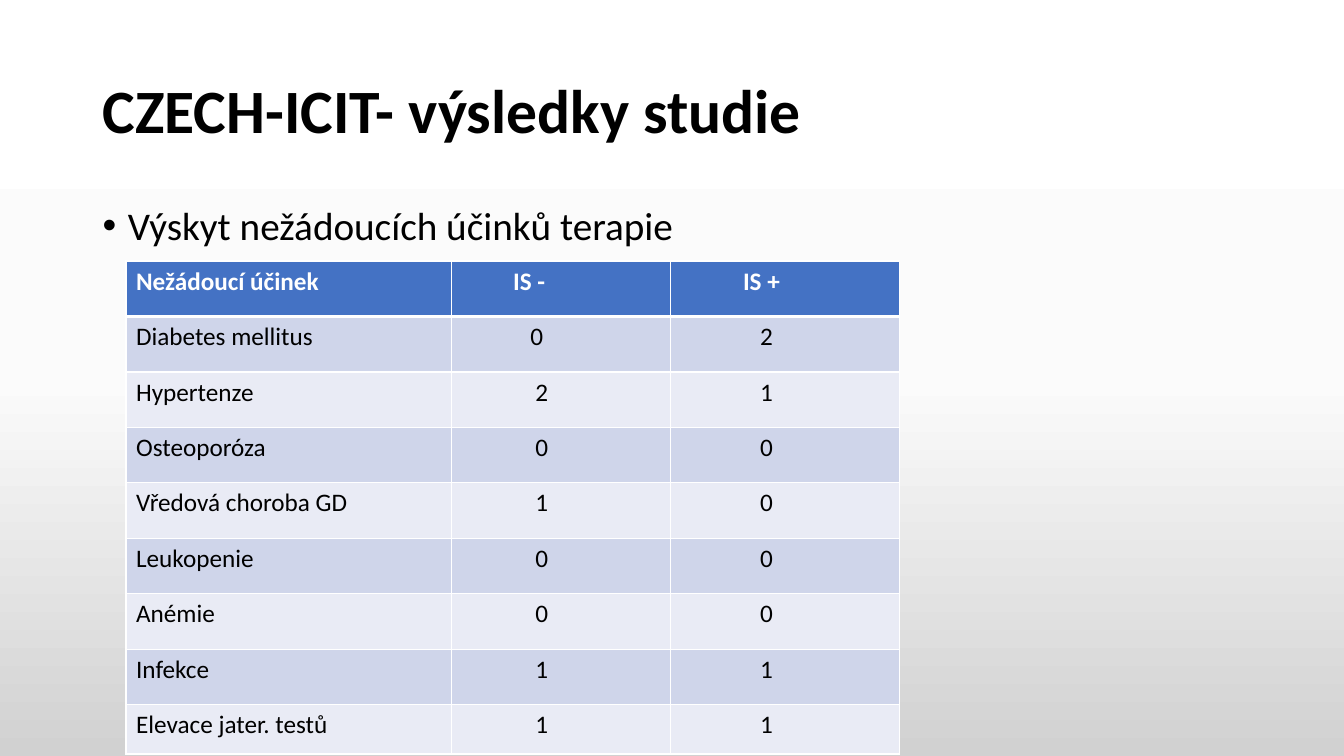
from copy import deepcopy

from lxml.etree import SubElement
from pptx import Presentation
from pptx.dml.color import RGBColor
from pptx.enum.text import MSO_ANCHOR
from pptx.oxml.ns import qn
from pptx.util import Inches, Pt

COLORS = {
    "text": "000000",
    "white": "FFFFFF",
    "header": "4472C4",
    "band_dark": "CFD5EA",
    "band_light": "E9EBF5",
    "background_middle": "FBFBFB",
    "background_bottom": "D1D1D1",
}

ADVERSE_EFFECTS = [
    ("Nežádoucí účinek", "IS -", "IS +"),
    ("Diabetes mellitus", "0", "2"),
    ("Hypertenze", "2", "1"),
    ("Osteoporóza", "0", "0"),
    ("Vředová choroba GD", "1", "0"),
    ("Leukopenie", "0", "0"),
    ("Anémie", "0", "0"),
    ("Infekce", "1", "1"),
    ("Elevace jater. testů", "1", "1"),
]
COLUMN_WIDTHS = (3.23, 2.17, 2.27)
ROW_HEIGHTS = [0.55] * 8 + [0.49]
HEADER_INDENTS = (0.1, 0.61, 0.72)
FIRST_ROW_INDENTS = (0.1, 0.78, 0.89)
VALUE_INDENTS = (0.1, 0.83, 0.89)


class SlideBuilder:
    font_name = "Calibri"

    def __init__(self, slide):
        self.slide = slide

    def color(self, name):
        return RGBColor.from_string(COLORS[name])

    def style(self, paragraph, size, color="text", bold=False):
        for run in paragraph.runs:
            run.font.name = self.font_name
            run.font.size = Pt(size)
            run.font.bold = bold
            run.font.color.rgb = self.color(color)

    def background(self, stops):
        fill = self.slide.background.fill
        fill.gradient()
        fill.gradient_angle = 270
        stop_list = self.slide.element.find(".//" + qn("a:gsLst"))
        while len(stop_list) < len(stops):
            stop_list.append(deepcopy(stop_list[0]))
        for stop, (position, name) in zip(fill.gradient_stops, stops):
            stop.position = position
            stop.color.rgb = self.color(name)

    def text(self, box, text, size, bold=False, anchor=MSO_ANCHOR.TOP, bullet=False):
        shape = self.slide.shapes.add_textbox(*map(Inches, box))
        frame = shape.text_frame
        frame.word_wrap = True
        frame.vertical_anchor = anchor
        frame.text = text
        paragraph = frame.paragraphs[0]
        paragraph.line_spacing = 0.9
        if bullet:
            properties = paragraph._p.get_or_add_pPr()
            properties.set("marL", str(Inches(0.25)))
            properties.set("indent", str(-Inches(0.25)))
            SubElement(properties, qn("a:buFont"), typeface="Arial")
            SubElement(properties, qn("a:buChar"), char="•")
        self.style(paragraph, size, bold=bold)

    def border(self, cell, side, width):
        line = SubElement(cell._tc.get_or_add_tcPr(), qn("a:" + side), w=str(Pt(width)))
        fill = SubElement(line, qn("a:solidFill"))
        SubElement(fill, qn("a:srgbClr"), val=COLORS["white"])

    def cell(self, cell, text, row, indent):
        is_header = row == 0
        cell.text = text
        cell.margin_left = Inches(indent)
        widths = {
            "lnL": 1,
            "lnR": 1,
            "lnT": 3 if row == 1 else 1,
            "lnB": 3 if is_header else 1,
        }
        for side, width in widths.items():
            self.border(cell, side, width)
        band = "band_dark" if row % 2 else "band_light"
        cell.fill.solid()
        cell.fill.fore_color.rgb = self.color("header" if is_header else band)
        color = "white" if is_header else "text"
        self.style(cell.text_frame.paragraphs[0], 18, color, is_header)

    def table(self, left, top, rows):
        table = self.slide.shapes.add_table(
            len(rows), len(COLUMN_WIDTHS), Inches(left), Inches(top),
            Inches(sum(COLUMN_WIDTHS)), Inches(sum(ROW_HEIGHTS)),
        ).table
        for column, width in zip(table.columns, COLUMN_WIDTHS):
            column.width = Inches(width)
        special_indents = {0: HEADER_INDENTS, 1: FIRST_ROW_INDENTS}
        for row, texts in enumerate(rows):
            table.rows[row].height = Inches(ROW_HEIGHTS[row])
            indents = special_indents.get(row, VALUE_INDENTS)
            for column, (text, indent) in enumerate(zip(texts, indents)):
                self.cell(table.cell(row, column), text, row, indent)


def main():
    presentation = Presentation()
    presentation.slide_width = Inches(13.33)
    presentation.slide_height = Inches(7.5)
    slide = presentation.slides.add_slide(presentation.slide_layouts[6])
    builder = SlideBuilder(slide)
    builder.background(
        [(0, "white"), (0.5, "background_middle"), (1, "background_bottom")]
    )
    builder.text(
        (0.92, 0.4, 11.5, 1.45), "CZECH-ICIT- výsledky studie", 44,
        bold=True, anchor=MSO_ANCHOR.MIDDLE,
    )
    builder.text(
        (0.92, 2, 11.5, 4.76), "Výskyt nežádoucích účinků terapie", 28, bullet=True
    )
    builder.table(1.25, 2.59, ADVERSE_EFFECTS)
    presentation.save("out.pptx")


if __name__ == "__main__":
    main()
